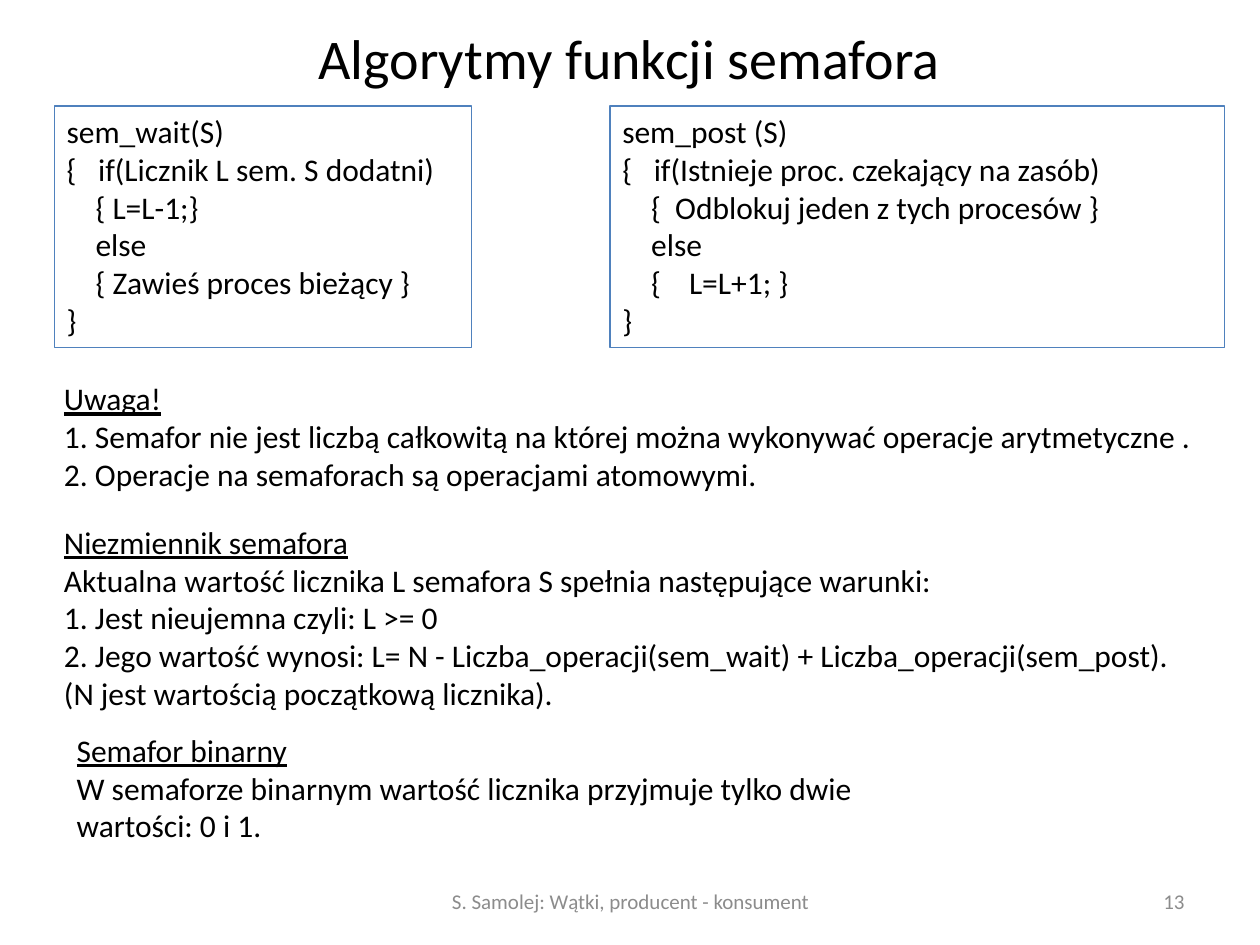
from dataclasses import dataclass
from typing import Any

from pptx import Presentation
from pptx import util as u
from pptx.dml.color import RGBColor
from pptx.enum import shapes, text


def rgb(value):
    return RGBColor.from_string(value)


@dataclass
class SlideWriter:
    """Draws the kinds of element used on a slide in one shared style."""

    s: Any
    font: str = "Calibri"
    ink: str = "000000"
    muted: str = "8C8C8C"
    edge: str = "4F81BD"
    body: int = 18

    def add_run(self, p, words, size, color, underline=False):
        r = p.add_run()
        r.text = words
        r.font.name = self.font
        r.font.size = u.Pt(size)
        r.font.color.rgb = rgb(color)
        if underline:
            r.font.underline = True

    def paragraphs(self, tf, count):
        return [tf.paragraphs[0]] + [tf.add_paragraph() for _ in range(count - 1)]

    def frame(self, sp, anchor=text.MSO_ANCHOR.TOP):
        tf = sp.text_frame
        tf.word_wrap = True
        tf.vertical_anchor = anchor
        return tf

    def label(self, box, words, size, color, align):
        sp = self.s.shapes.add_textbox(*map(u.Inches, box))
        p = self.frame(sp, text.MSO_ANCHOR.MIDDLE).paragraphs[0]
        p.alignment = align
        self.add_run(p, words, size, color)

    def note(self, box, heading, lines):
        sp = self.s.shapes.add_textbox(*map(u.Inches, box))
        tf = self.frame(sp)
        tf.auto_size = text.MSO_AUTO_SIZE.SHAPE_TO_FIT_TEXT
        first, *rest = self.paragraphs(tf, 1 + len(lines))
        self.add_run(first, heading, self.body, self.ink, underline=True)
        for p, line in zip(rest, lines):
            self.add_run(p, line, self.body, self.ink)

    def code(self, box, lines):
        sp = self.s.shapes.add_shape(shapes.MSO_SHAPE.RECTANGLE, *map(u.Inches, box))
        sp.shadow.inherit = False
        sp.fill.background()
        sp.line.color.rgb = rgb(self.edge)
        sp.line.width = u.Pt(0.75)
        tf = self.frame(sp)
        tf.auto_size = text.MSO_AUTO_SIZE.SHAPE_TO_FIT_TEXT
        for p, (start, hang, line) in zip(self.paragraphs(tf, len(lines)), lines):
            p.alignment = text.PP_ALIGN.LEFT
            pPr = p._p.get_or_add_pPr()
            pPr.set("marL", str(u.Inches(start + hang)))
            pPr.set("indent", str(-u.Inches(hang)))
            self.add_run(p, line, self.body, self.ink)


def main():
    prs = Presentation()
    prs.slide_width, prs.slide_height = u.Inches(10), u.Inches(7.5)
    w = SlideWriter(prs.slides.add_slide(prs.slide_layouts[6]))
    align = text.PP_ALIGN
    step = 0.23

    w.label((0.5, 0.3, 8.99, 0.3), "Algorytmy funkcji semafora", 32, w.ink, align.CENTER)
    w.label((3.42, 6.95, 3.17, 0.4), "S. Samolej: Wątki, producent - konsument",
            12, w.muted, align.CENTER)
    w.label((7.17, 6.95, 2.33, 0.4), "13", 12, w.muted, align.RIGHT)

    w.code((0.43, 0.84, 3.31, 1.92), [
        (0, 0, "sem_wait(S)"),
        (0, 0.25, "{\tif(Licznik L sem. S dodatni)"),
        (step, 0, "{ L=L-1;}"),
        (step, 0, "else"),
        (step, 0, "{ Zawieś proces bieżący }"),
        (0, 0, "}"),
    ])
    w.code((4.84, 0.84, 4.88, 1.92), [
        (0, 0, "sem_post (S)"),
        (0, 0.25, "{\tif(Istnieje proc. czekający na zasób)"),
        (step, 0.19, "{\tOdblokuj jeden z tych procesów }"),
        (step, 0, "else"),
        (step, 0.3, "{\tL=L+1; }"),
        (0, 0, "}"),
    ])

    w.note((0.41, 2.96, 9.4, 1.01), "Uwaga!", [
        "1. Semafor nie jest liczbą całkowitą na której można wykonywać operacje arytmetyczne .",
        "2. Operacje na semaforach są operacjami atomowymi.",
    ])
    w.note((0.41, 4.1, 9.13, 1.62), "Niezmiennik semafora", [
        "Aktualna wartość licznika L semafora S spełnia następujące warunki:",
        "1. Jest nieujemna czyli: L >= 0",
        "2. Jego wartość wynosi: L= N - Liczba_operacji(sem_wait) + "
        "Liczba_operacji(sem_post). (N jest wartością początkową licznika).",
    ])
    w.note((0.51, 5.75, 9.29, 1.01), "Semafor binarny", [
        "W semaforze binarnym wartość licznika przyjmuje tylko dwie",
        "wartości: 0 i 1.",
    ])
    prs.save("out.pptx")


if __name__ == "__main__":
    main()
